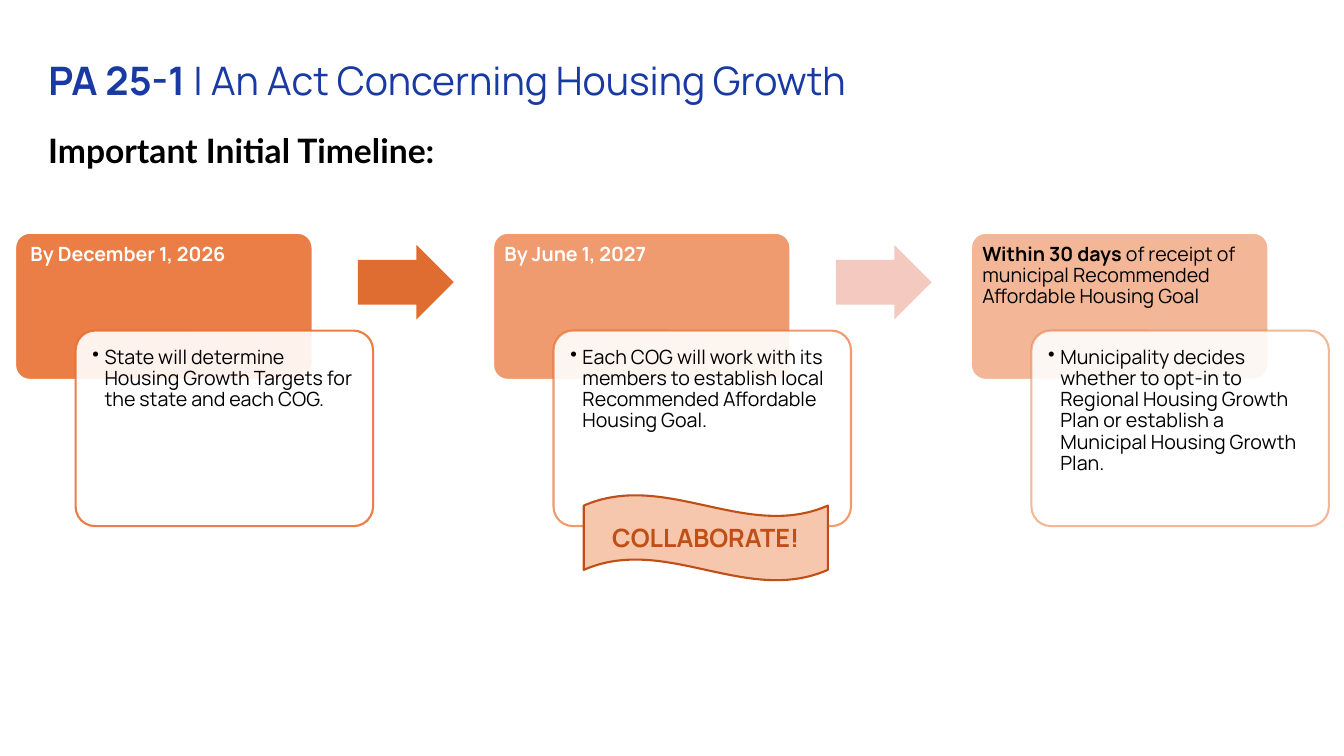
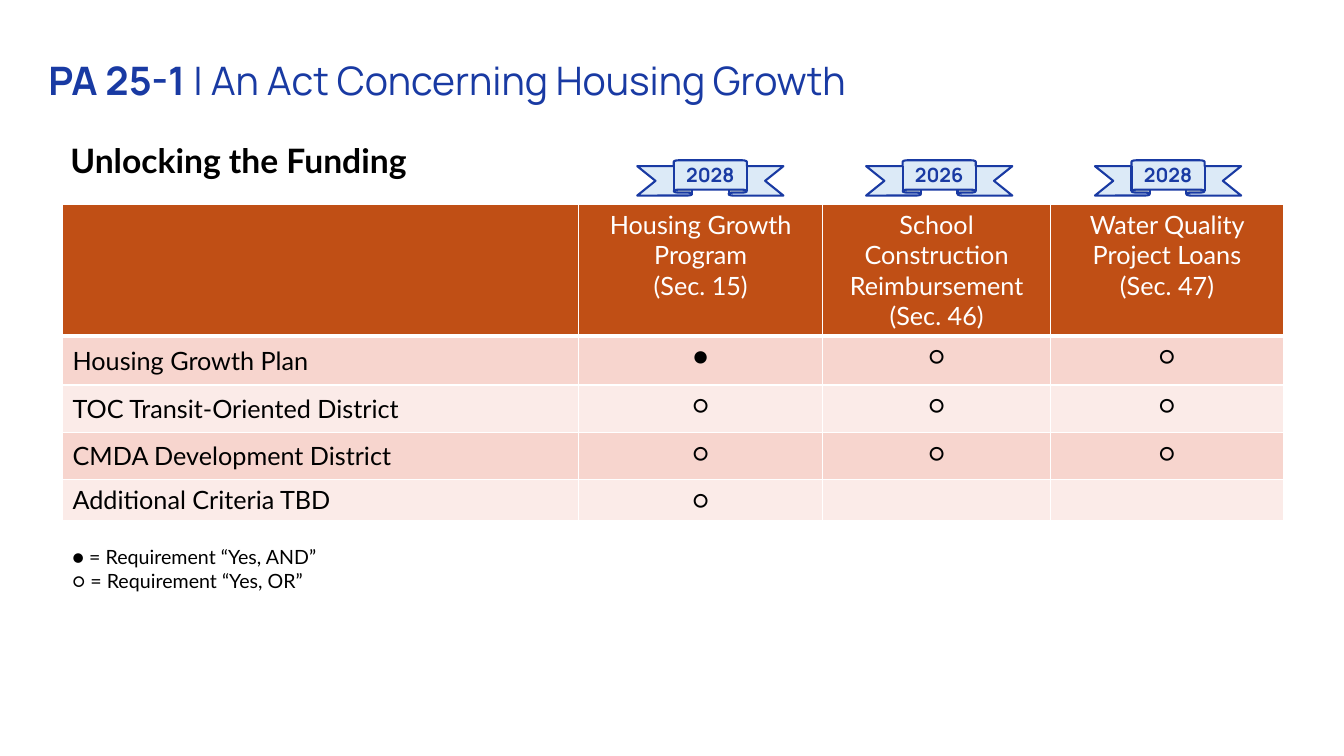
"""Build two slides on the housing growth act: its timeline and its funding."""
import dataclasses

import lxml.etree
import pptx
import pptx.dml.color
import pptx.enum.shapes
import pptx.enum.text
import pptx.oxml.ns
import pptx.util

SHAPE = pptx.enum.shapes.MSO_SHAPE
ALIGN = pptx.enum.text.PP_ALIGN
ANCHOR = pptx.enum.text.MSO_ANCHOR
qn = pptx.oxml.ns.qn


@dataclasses.dataclass(frozen=True)
class Theme:
    """Fonts, type sizes and colours of the deck."""
    display: str = "Manrope"
    body: str = "Lato"
    title_size: int = 28
    heading_size: int = 24
    table_size: int = 18
    text_size: int = 14
    outline: float = 1.5
    blue: str = "193AA3"
    pale_blue: str = "DCEAF7"
    orange: str = "E97132"
    rust: str = "C04F15"
    peach: str = "F6C6AD"
    arrow_dark: str = "DF6C30"
    arrow_light: str = "F4C9BF"
    band_dark: str = "F7D5CE"
    band_light: str = "FBEBE8"
    white: str = "FFFFFF"
    black: str = "000000"


THEME = Theme()
EMU_PER_PX = 9144
STEP_PITCH = 474
RIBBON_PITCH = 227
TITLE = [("PA 25-1 ", True), ("| An Act Concerning Housing Growth", False)]

STEPS = [
    {"label": [("By December 1, 2026", True)], "color": THEME.white, "inset": 11, "opacity": 90,
     "detail": "State will determine Housing Growth Targets for the state and each COG."},
    {"label": [("By June 1, 2027", True)], "color": THEME.white, "inset": 7, "opacity": 70,
     "detail": "Each COG will work with its members to establish local "
               "Recommended Affordable Housing Goal."},
    {"label": [("Within 30 days ", True),
               ("of receipt of municipal Recommended Affordable Housing Goal", False)],
     "color": THEME.black, "inset": 7, "opacity": 50,
     "detail": "Municipality decides whether to opt-in to Regional Housing Growth Plan "
               "or establish a Municipal Housing Growth Plan."},
]

COLUMN_WIDTHS = [512, 242, 226, 231]
ROW_HEIGHTS = [129, 49, 47, 47, 40]
FUNDING = [
    [[], ["Housing Growth Program", "(Sec. 15)"],
     ["School Construction Reimbursement", "(Sec. 46)"],
     ["Water Quality Project Loans", "(Sec. 47)"]],
    [["Housing Growth Plan"], ["●"], ["○"], ["○"]],
    [["TOC Transit-Oriented District"], ["○"], ["○"], ["○"]],
    [["CMDA Development District"], ["○"], ["○"], ["○"]],
    [["Additional Criteria TBD"], ["○"], [], []],
]


def px(length):
    """Turn pixels into EMU."""
    return pptx.util.Emu(length * EMU_PER_PX)


def rgb(code):
    """Turn a hex code into a colour."""
    return pptx.dml.color.RGBColor.from_string(code)


def add_bullet(para):
    """Give a paragraph a hanging bullet."""
    properties = para._p.get_or_add_pPr()
    properties.set("marL", str(px(12)))
    properties.set("indent", str(px(-12)))
    lxml.etree.SubElement(properties, qn("a:buChar"), char="•")


def write_text(frame, paragraphs, *, font=THEME.display, size=THEME.text_size, color=THEME.black,
               bold=False, align=ALIGN.LEFT, spacing=None, bullet=False):
    """Fill a text frame; a paragraph is a string or a list of (text, bold) spans."""
    frame.word_wrap = True
    for index, content in enumerate(paragraphs):
        para = frame.add_paragraph() if index else frame.paragraphs[0]
        if bullet:
            add_bullet(para)
        para.alignment = align
        para.line_spacing = spacing
        spans = [(content, bold)] if isinstance(content, str) else content
        for text, heavy in spans:
            span = para.add_run()
            span.text = text
            span.font.name = font
            span.font.size = pptx.util.Pt(size)
            span.font.bold = heavy
            span.font.color.rgb = rgb(color)


def set_insets(frame, left, top, right, bottom):
    """Set the four inner margins of a text frame."""
    frame.margin_left, frame.margin_top = px(left), px(top)
    frame.margin_right, frame.margin_bottom = px(right), px(bottom)


def set_opacity(parent, percent):
    """Make the solid fill inside an XML element partly transparent."""
    color = parent.find(qn("a:solidFill")).find(qn("a:srgbClr"))
    lxml.etree.SubElement(color, qn("a:alpha"), val=str(percent * 1000))


def add_page(deck):
    """Add a slide with the shared title."""
    page = deck.slides.add_slide(deck.slide_layouts[5])
    title = page.shapes.title
    title.left, title.top, title.width, title.height = map(px, (38, 40, 1204, 85))
    title.text_frame.auto_size = pptx.enum.text.MSO_AUTO_SIZE.NONE
    title.text_frame.vertical_anchor = ANCHOR.MIDDLE
    write_text(title.text_frame, [TITLE], size=THEME.title_size, color=THEME.blue, spacing=0.9)
    return page


def add_text(page, place, paragraphs, **style):
    """Add a text box."""
    box = page.shapes.add_textbox(*map(px, place))
    write_text(box.text_frame, paragraphs, **style)


def add_shape(page, kind, place, fill, line=None, fill_opacity=100, line_opacity=100):
    """Add a flat preset shape."""
    shape = page.shapes.add_shape(kind, *map(px, place))
    shape.shadow.inherit = False
    shape.fill.solid()
    shape.fill.fore_color.rgb = rgb(fill)
    properties = shape.element.spPr
    if fill_opacity < 100:
        set_opacity(properties, fill_opacity)
    if line is None:
        shape.line.fill.background()
        return shape
    shape.line.color.rgb = rgb(line)
    shape.line.width = pptx.util.Pt(THEME.outline)
    if line_opacity < 100:
        set_opacity(properties.find(qn("a:ln")), line_opacity)
    return shape


def add_step(page, left, step):
    """Add a date card with its overlapping detail card."""
    card = add_shape(page, SHAPE.ROUNDED_RECTANGLE, (left, 231, 295, 146), THEME.orange,
                     THEME.white, fill_opacity=step["opacity"])
    detail = add_shape(page, SHAPE.ROUNDED_RECTANGLE, (left + 60, 328, 295, 194), THEME.white,
                       THEME.orange, fill_opacity=90, line_opacity=step["opacity"])
    for shape in (card, detail):
        shape.adjustments[0] = 0.1
        shape.text_frame.vertical_anchor = ANCHOR.TOP
    set_insets(card.text_frame, step["inset"], 7, 7, 6)
    set_insets(detail.text_frame, 11, 11, 11, 11)
    write_text(card.text_frame, [step["label"]], color=step["color"], spacing=0.9)
    write_text(detail.text_frame, [step["detail"]], spacing=0.9, bullet=True)


def add_arrow(page, left, fill):
    """Add a block arrow between two steps."""
    arrow = add_shape(page, SHAPE.RIGHT_ARROW, (left, 243, 95, 74), fill)
    arrow.adjustments[0] = 0.6
    arrow.adjustments[1] = 0.5


def add_banner(page, kind, place, text, fill, color, size):
    """Add an outlined banner with a centred bold caption."""
    banner = add_shape(page, kind, place, fill, color)
    set_insets(banner.text_frame, 0, 0, 0, 0)
    banner.text_frame.vertical_anchor = ANCHOR.MIDDLE
    write_text(banner.text_frame, [text], size=size, color=color, bold=True, align=ALIGN.CENTER)


def set_borders(cell, bottom):
    """Draw white cell borders, with the bottom width given in points."""
    properties = cell._tc.get_or_add_tcPr()
    for side, width in (("L", 1), ("R", 1), ("T", 1), ("B", bottom)):
        line = lxml.etree.SubElement(properties, qn("a:ln" + side), w=str(pptx.util.Pt(width)))
        fill = lxml.etree.SubElement(line, qn("a:solidFill"))
        lxml.etree.SubElement(fill, qn("a:srgbClr"), val=THEME.white)


def add_funding_table(page):
    """Add the table of funding programs and their requirements."""
    place = (62, 203, sum(COLUMN_WIDTHS), sum(ROW_HEIGHTS))
    table = page.shapes.add_table(len(FUNDING), len(COLUMN_WIDTHS), *map(px, place)).table
    table.horz_banding = False
    for column, width in zip(table.columns, COLUMN_WIDTHS):
        column.width = px(width)
    for row, height in zip(table.rows, ROW_HEIGHTS):
        row.height = px(height)
    for row_index, row in enumerate(FUNDING):
        header = row_index == 0
        band = THEME.band_dark if row_index % 2 else THEME.band_light
        for column_index, paragraphs in enumerate(row):
            cell = table.cell(row_index, column_index)
            set_borders(cell, 3 if header else 1)
            cell.fill.solid()
            cell.fill.fore_color.rgb = rgb(THEME.rust if header else band)
            if column_index == 0:
                cell.vertical_anchor = ANCHOR.MIDDLE
            write_text(cell.text_frame, paragraphs, font=THEME.body, size=THEME.table_size,
                       color=THEME.white if header else THEME.black,
                       align=ALIGN.CENTER if column_index else ALIGN.LEFT)


def build_timeline(deck):
    """Build the timeline slide."""
    page = add_page(deck)
    for index, step in enumerate(STEPS):
        add_step(page, 15 + index * STEP_PITCH, step)
    for index, fill in enumerate((THEME.arrow_dark, THEME.arrow_light)):
        add_arrow(page, 355 + index * STEP_PITCH, fill)
    add_text(page, (38, 124, 681, 50), ["Important Initial Timeline:"],
             font=THEME.body, size=THEME.heading_size, bold=True)
    add_banner(page, SHAPE.WAVE, (579, 491, 242, 85), "COLLABORATE!",
               THEME.peach, THEME.rust, THEME.table_size)


def build_funding(deck):
    """Build the funding slide."""
    page = add_page(deck)
    add_text(page, (60, 134, 560, 50), ["Unlocking the Funding"],
             font=THEME.body, size=THEME.heading_size, bold=True)
    add_funding_table(page)
    add_text(page, (62, 536, 317, 80), ["● = Requirement “Yes, AND”", "○ = Requirement “Yes, OR”"],
             font=THEME.body)
    for index, year in enumerate(("2028", "2026", "2028")):
        add_banner(page, SHAPE.UP_RIBBON, (632 + index * RIBBON_PITCH, 159, 145, 35), year,
                   THEME.pale_blue, THEME.blue, THEME.text_size)


def main():
    """Build and save the deck."""
    deck = pptx.Presentation()
    deck.slide_width, deck.slide_height = px(1333), px(750)
    build_timeline(deck)
    build_funding(deck)
    deck.save("out.pptx")


if __name__ == "__main__":
    main()
